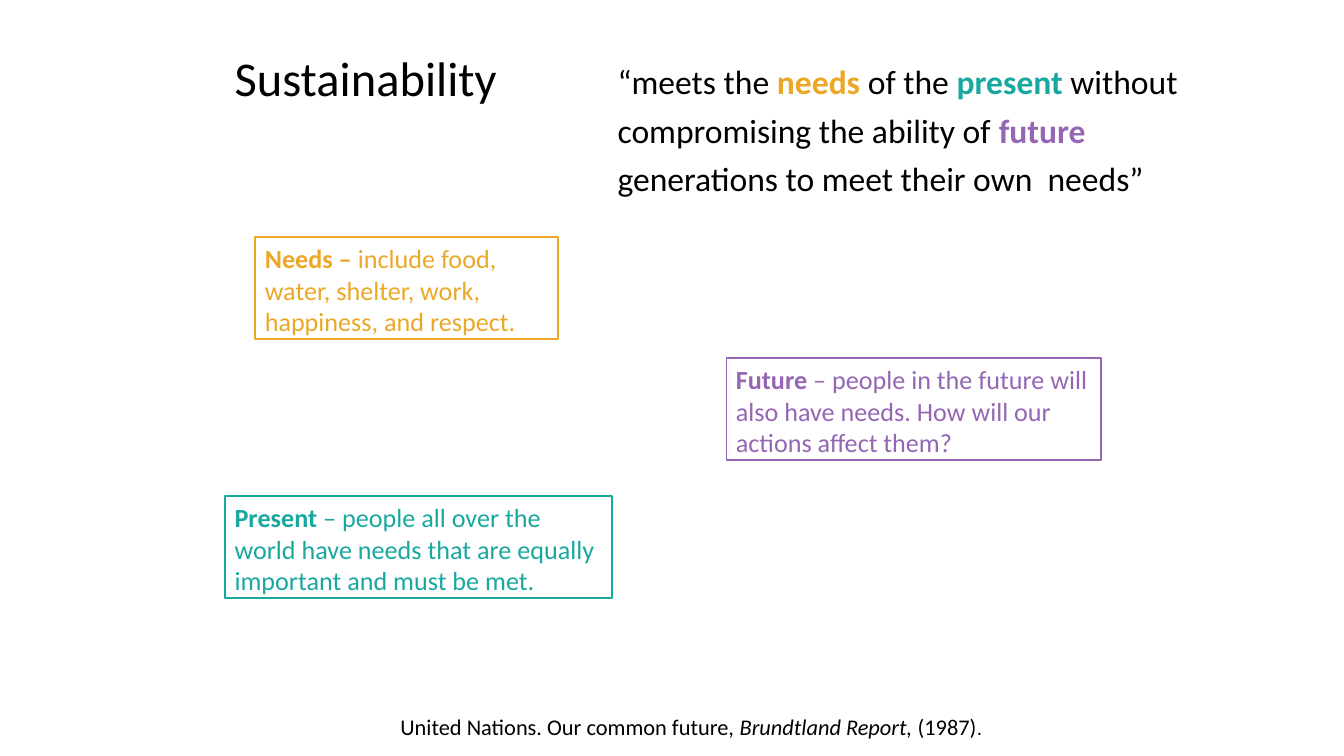
"""Build a slide that explains the definition of sustainability."""
from pptx import Presentation
from pptx.dml.color import RGBColor as RGB
from pptx.enum.shapes import MSO_SHAPE as SHAPE
from pptx.enum.text import MSO_ANCHOR as ANCHOR, PP_ALIGN as ALIGN
from pptx.util import Inches, Pt

THEME = dict(
    black=RGB(0, 0, 0), white=RGB(255, 255, 255),
    needs=RGB(0xEB, 0xA8, 0x26), present=RGB(0x18, 0xA8, 0x9F), future=RGB(0x94, 0x66, 0xB3),
    title=Pt(26), quote=Pt(18), card=Pt(14), source=Pt(12), stop=Pt(11),
    font="Calibri", stop_font="Arial", line=Pt(1))

prs = Presentation()
prs.slide_width = Inches(10)
prs.slide_height = prs.slide_width * 9 // 16
COL, ROW = prs.slide_width / 100, prs.slide_height / 100
s = prs.slides.add_slide(prs.slide_layouts[6])


def place(x, y, w, h):
    return int(x * COL), int(y * ROW), int(w * COL), int(h * ROW)


def write(sp, size, runs, inset=(0.07, 0.04), anchor=ANCHOR.TOP, **para):
    tf = sp.text_frame
    side, edge = map(Inches, inset)
    frame = dict(word_wrap=True, vertical_anchor=anchor, margin_left=side,
                 margin_right=side, margin_top=edge, margin_bottom=edge)
    for name, value in frame.items():
        setattr(tf, name, value)
    p = tf.paragraphs[0]
    for name, value in (dict(alignment=ALIGN.LEFT) | para).items():
        setattr(p, name, value)
    for text, color, style in runs:
        r = p.add_run()
        r.text = text
        r.font.color.rgb = THEME[color]
        for name, value in (dict(name=THEME["font"], size=THEME[size], bold=False) | style).items():
            setattr(r.font, name, value)


bold, italic = dict(bold=True), dict(italic=True)
stop = dict(name=THEME["stop_font"], size=THEME["stop"])

title = s.shapes.add_textbox(*place(16.75, 6.5, 69.9, 8.35))
write(title, "title", [("Sustainability", "black", {})], anchor=ANCHOR.MIDDLE, line_spacing=0.9)

quote = s.shapes.add_textbox(*place(45.25, 6.35, 45.8, 34))
write(quote, "quote", [
    ("“meets the ", "black", {}), ("needs", "needs", bold), (" of the ", "black", {}),
    ("present ", "present", bold), ("without compromising the ability of ", "black", {}),
    ("future", "future", bold), (" generations to meet their own  needs”", "black", {}),
], line_spacing=1.2)

source = s.shapes.add_textbox(*place(16.7, 93.8, 69.9, 9.4))
write(source, "source", [
    ("United Nations. Our common future, ", "black", {}), ("Brundtland Report, ", "black", italic),
    ("(1987)", "black", {}), (". ", "black", stop),
], inset=(0.03, 0.03), alignment=ALIGN.CENTER)

cards = [
    ("needs", 19, 31.4, 22.5, "Needs – ",
     "include food, water, shelter, work, happiness, and respect."),
    ("present", 16.75, 65.65, 28.8, "Present",
     " – people all over the world have needs that are equally important and must be met."),
    ("future", 54.05, 47.4, 27.9, "Future",
     " – people in the future will also have needs. How will our actions affect them?"),
]
for color, x, y, w, term, meaning in cards:
    sp = s.shapes.add_shape(SHAPE.RECTANGLE, *place(x, y, w, 13.5))
    sp.shadow.inherit = False
    sp.fill.solid()
    sp.fill.fore_color.rgb = THEME["white"]
    sp.line.color.rgb = THEME[color]
    sp.line.width = THEME["line"]
    write(sp, "card", [(term, color, bold), (meaning, color, {})])

prs.save("out.pptx")
